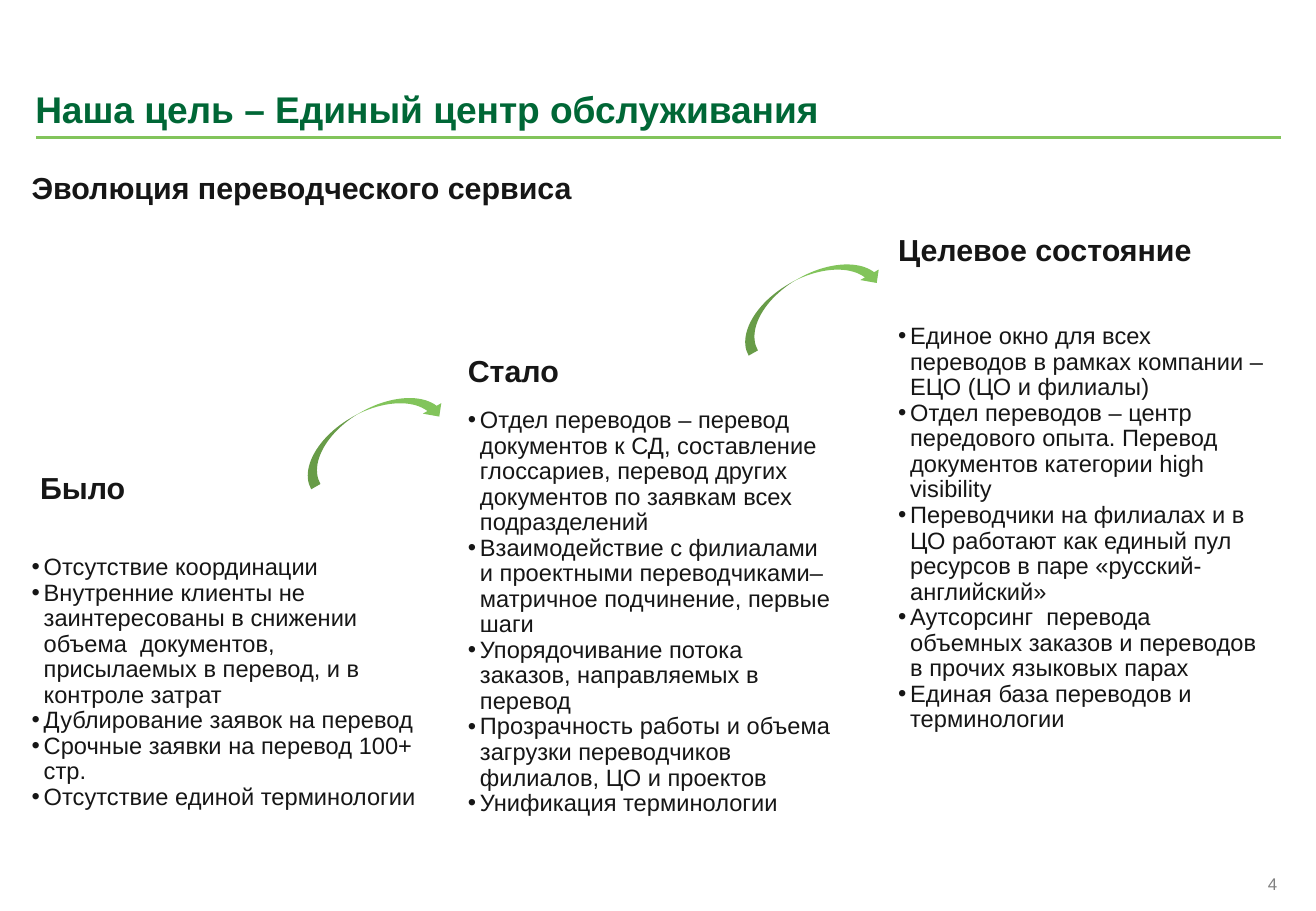
"""Builds the slide on how the translation service evolved."""
from dataclasses import dataclass

from lxml import etree
from pptx import Presentation
from pptx import util as u
from pptx.dml.color import RGBColor
from pptx.enum import shapes, text
from pptx.oxml.ns import qn

PX = 9144
INK = {"title": "006736", "text": "161616", "green": "82C45B", "page": "808080"}
FACE = "Arial"
ALIGN = text.PP_ALIGN
ANCHOR = text.MSO_ANCHOR


@dataclass(frozen=True)
class Box:
    left: int
    top: int
    width: int
    height: int


@dataclass(frozen=True)
class Stage:
    name: str
    head: Box
    body: Box
    slot: int
    items: tuple[str, ...]


STAGES = (
    Stage("Было", Box(33, 390, 228, 27), Box(26, 457, 323, 212), 2, (
        "Отсутствие координации",
        "Внутренние клиенты не заинтересованы в снижении объема  документов, "
        "присылаемых в перевод, и в контроле затрат",
        "Дублирование заявок на перевод",
        "Срочные заявки на перевод 100+ стр.",
        "Отсутствие единой терминологии",
    )),
    Stage("Стало", Box(385, 293, 228, 27), Box(385, 336, 303, 382), 4, (
        "Отдел переводов – перевод документов к СД, составление глоссариев, "
        "перевод других документов по заявкам всех подразделений",
        "Взаимодействие с филиалами и проектными переводчиками– "
        "матричное подчинение, первые шаги",
        "Упорядочивание потока заказов, направляемых в перевод",
        "Прозрачность работы и объема загрузки переводчиков филиалов, ЦО и проектов",
        "Унификация терминологии",
    )),
    Stage("Целевое состояние", Box(739, 194, 268, 27), Box(739, 267, 303, 339), 1, (
        "Единое окно для всех переводов в рамках компании – ЕЦО (ЦО и филиалы)",
        "Отдел переводов – центр передового опыта. Перевод документов "
        "категории high visibility",
        "Переводчики на филиалах и в ЦО работают как единый пул ресурсов "
        "в паре «русский-английский»",
        "Аутсорсинг  перевода объемных заказов и переводов в прочих языковых парах",
        "Единая база переводов и терминологии",
    )),
)
ARROWS = (Box(239, 338, 130, 35), Box(599, 228, 130, 35))


def place(shape, box: Box) -> None:
    shape.left, shape.top = box.left * PX, box.top * PX
    shape.width, shape.height = box.width * PX, box.height * PX


def write(shape, box: Box, *lines: str, size: int = 18, bold: bool = True,
          ink: str = "text", align=ALIGN.LEFT, anchor=ANCHOR.TOP,
          inset: int = 0, space: float = 0.9, bullet: bool = False) -> None:
    place(shape, box)
    frame = shape.text_frame
    frame.text = "\n".join(lines)
    frame.word_wrap = True
    frame.auto_size = text.MSO_AUTO_SIZE.NONE
    frame.vertical_anchor = anchor
    frame.margin_left = frame.margin_right = inset * PX
    frame.margin_top = frame.margin_bottom = inset * PX // 2
    for para in frame.paragraphs:
        props = para._p.get_or_add_pPr()
        hang = 10 * PX if bullet else 0
        props.set("marL", str(hang))
        props.set("indent", str(-hang))
        if bullet:
            etree.SubElement(props, qn("a:buFont"), typeface=FACE)
            etree.SubElement(props, qn("a:buChar"), char="•")
        else:
            etree.SubElement(props, qn("a:buNone"))
        para.alignment = align
        para.line_spacing = space
        para.space_before = para.space_after = u.Pt(0)
        for run in para.runs:
            font = run.font
            font.name, font.size, font.bold = FACE, u.Pt(size), bold
            font.color.rgb = RGBColor.from_string(INK[ink])


def draw_rule(slide) -> None:
    rule = slide.shapes.add_connector(
        shapes.MSO_CONNECTOR.STRAIGHT, 30 * PX, 113 * PX, 1054 * PX, 113 * PX)
    rule.line.color.rgb = RGBColor.from_string(INK["green"])
    rule.line.width = u.Pt(1.5)
    etree.SubElement(rule._element.spPr, qn("a:effectLst"))


def draw_arrow(slide, box: Box) -> None:
    arrow = slide.shapes.add_shape(shapes.MSO_SHAPE.CURVED_DOWN_ARROW, 0, 0, PX, PX)
    place(arrow, box)
    arrow.rotation = 330.4
    arrow.shadow.inherit = False
    arrow.fill.solid()
    arrow.fill.fore_color.rgb = RGBColor.from_string(INK["green"])
    arrow.line.fill.background()


def add_box(slide):
    return slide.shapes.add_textbox(0, 0, PX, PX)


def main() -> None:
    deck = Presentation()
    deck.slide_width, deck.slide_height = 1083 * PX, 750 * PX
    slide = deck.slides.add_slide(deck.slide_layouts[4])
    slots = {slot.placeholder_format.idx: slot for slot in slide.placeholders}
    draw_rule(slide)
    write(add_box(slide), Box(934, 714, 127, 27), "4", size=10, bold=False,
          ink="page", align=ALIGN.RIGHT, anchor=ANCHOR.MIDDLE, inset=10, space=1.0)
    write(slots[0], Box(19, 29, 881, 84), "Наша цель – Единый центр обслуживания",
          size=22, ink="title", anchor=ANCHOR.BOTTOM, inset=10, space=1.0)
    write(slots[3], Box(26, 143, 492, 27), "Эволюция переводческого сервиса")
    for stage in STAGES:
        write(add_box(slide), stage.head, stage.name)
        write(slots[stage.slot], stage.body, *stage.items,
              size=14, bold=False, bullet=True)
    for box in ARROWS:
        draw_arrow(slide, box)
    deck.save("out.pptx")


if __name__ == "__main__":
    main()
